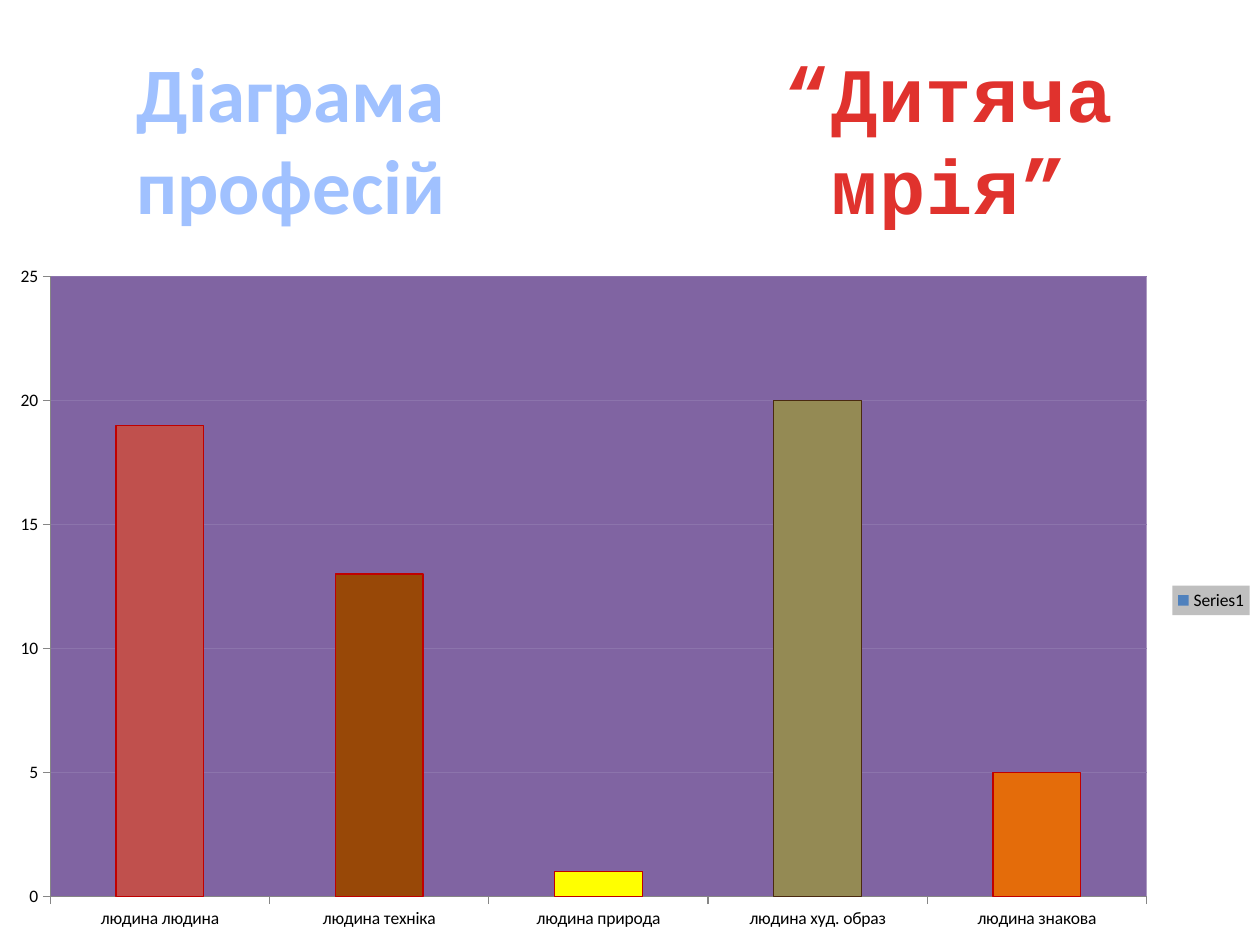
from pptx import Presentation
from pptx.chart.data import CategoryChartData
from pptx.dml.color import RGBColor
from pptx.enum.chart import XL_CHART_TYPE as ChartType, XL_LEGEND_POSITION as LegendPos
from pptx.enum.chart import XL_TICK_MARK as Tick
from pptx.enum.text import MSO_ANCHOR as Anchor, MSO_AUTO_SIZE as AutoSize, PP_ALIGN as Align
from pptx.oxml import parse_xml
from pptx.oxml.ns import nsdecls
from pptx.util import Inches, Pt

COLORS = {
    "heading": "A0C1FF", "dream": "E0322D", "text": "000000",
    "plot": "8064A2", "grid": "8C74AC", "axis": "868686",
    "legend": "BFBFBF", "series": "4F81BD",
    "red_edge": "C00000", "dark_edge": "4A2A10",
}
HEADING = "Діаграма професій"
DREAM = "“Дитяча мрія”"
SERIES_NAME = "Series1"
# profession type, count, bar colour, edge
PROFESSIONS = [
    ("людина людина", 19, "C0504D", "red_edge"),
    ("людина техніка", 13, "984807", "red_edge"),
    ("людина природа", 1, "FFFF00", "red_edge"),
    ("людина худ. образ", 20, "948A54", "dark_edge"),
    ("людина знакова", 5, "E46C0A", "red_edge"),
]
PLOT_LAYOUT = {"x": 0.04, "y": 0.03, "w": 0.87, "h": 0.9}


def rgb(name):
    return RGBColor.from_string(COLORS.get(name, name))


def write_heading(shape, text, box, font_name, color):
    shape.left, shape.top, shape.width, shape.height = map(Inches, box)
    frame = shape.text_frame
    frame.text = text
    frame.word_wrap = True
    frame.auto_size = AutoSize.NONE
    frame.vertical_anchor = Anchor.MIDDLE
    paragraph = frame.paragraphs[0]
    paragraph.alignment = Align.CENTER
    font = paragraph.font
    font.name, font.size, font.bold = font_name, Pt(44), True
    font.color.rgb = rgb(color)
    return paragraph


def fill_xml(color):
    return parse_xml(
        f'<c:spPr {nsdecls("c", "a")}><a:solidFill><a:srgbClr val="{COLORS[color]}"/>'
        "</a:solidFill></c:spPr>")


def fix_plot_area(chart):
    """Place the inner plot area and fill it and the legend."""
    plot_area = chart._chartSpace.chart.plotArea
    for layout in plot_area.findall("{*}layout"):
        plot_area.remove(layout)
    sizes = "".join(f'<c:{key} val="{value}"/>' for key, value in PLOT_LAYOUT.items())
    plot_area.insert(0, parse_xml(
        f'<c:layout {nsdecls("c")}><c:manualLayout><c:layoutTarget val="inner"/>'
        f'<c:xMode val="edge"/><c:yMode val="edge"/>{sizes}</c:manualLayout></c:layout>'))
    plot_area.append(fill_xml("plot"))
    chart.legend._element.find("{*}overlay").addnext(fill_xml("legend"))


def add_profession_chart(slide):
    data = CategoryChartData()
    data.categories = [row[0] for row in PROFESSIONS]
    data.add_series(SERIES_NAME, [row[1] for row in PROFESSIONS])
    chart = slide.shapes.add_chart(
        ChartType.COLUMN_CLUSTERED, Inches(0), Inches(2.03), Inches(10), Inches(5.47), data).chart
    chart.has_title = False
    chart.font.name, chart.font.size = "Calibri", Pt(10)
    chart.font.color.rgb = rgb("text")
    chart.has_legend = True
    chart.legend.position = LegendPos.RIGHT
    chart.legend.include_in_layout = False

    plot = chart.plots[0]
    plot.gap_width = 150
    plot.vary_by_categories = False
    series = plot.series[0]
    series.format.fill.solid()
    series.format.fill.fore_color.rgb = rgb("series")
    for index, (_, _, color, edge) in enumerate(PROFESSIONS):
        bar = series.points[index].format
        bar.fill.solid()
        bar.fill.fore_color.rgb = rgb(color)
        bar.line.color.rgb = rgb(edge)
        bar.line.width = Pt(0.75)

    for axis in (chart.category_axis, chart.value_axis):
        axis.major_tick_mark, axis.minor_tick_mark = Tick.OUTSIDE, Tick.NONE
        axis.format.line.color.rgb = rgb("axis")
        axis.format.line.width = Pt(0.75)
    counts = chart.value_axis
    counts.minimum_scale, counts.maximum_scale, counts.major_unit = 0, 25, 5
    counts.has_major_gridlines = True
    counts.major_gridlines.format.line.color.rgb = rgb("grid")
    counts.major_gridlines.format.line.width = Pt(0.75)
    fix_plot_area(chart)


def main():
    deck = Presentation()
    deck.slide_width, deck.slide_height = Inches(10), Inches(7.5)
    slide = deck.slides.add_slide(deck.slide_layouts[5])
    write_heading(slide.shapes.title, HEADING, (0.55, 0.47, 3.52, 1.25), "Calibri", "heading")
    dream_box = slide.shapes.add_textbox(0, 0, 0, 0)
    dream = write_heading(dream_box, DREAM, (5.31, 0.47, 4.45, 1.25), "Courier New", "dream")
    dream.runs[0].font._element.set("spc", "50")
    add_profession_chart(slide)
    deck.save("out.pptx")


if __name__ == "__main__":
    main()
